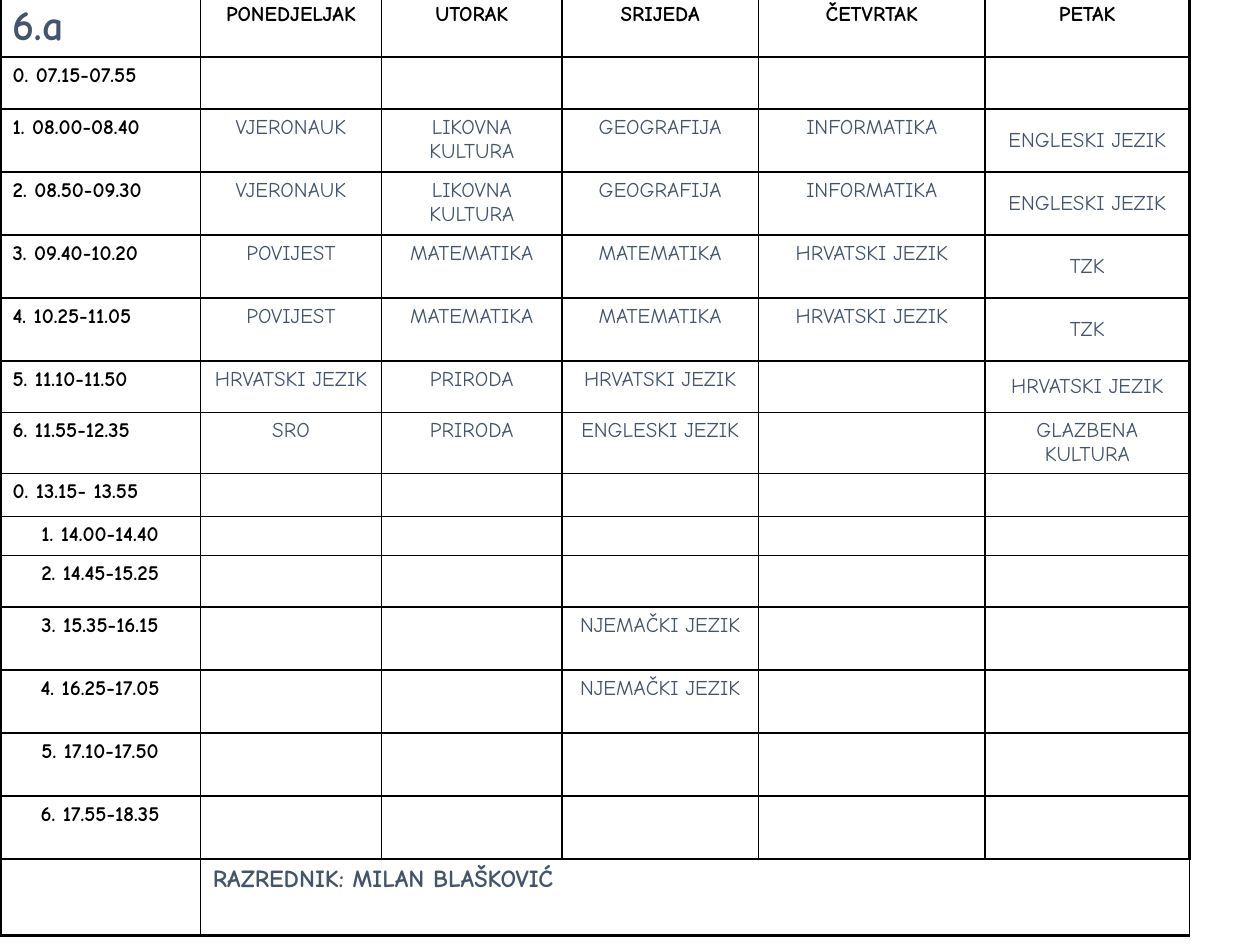
from dataclasses import dataclass

from lxml.etree import SubElement
from pptx import Presentation
from pptx.dml.color import RGBColor
from pptx.enum.text import MSO_ANCHOR as Anchor, PP_ALIGN as Align
from pptx.oxml.ns import qn
from pptx.util import Inches, Pt


@dataclass(frozen=True)
class Theme:
    font: str = "Comic Neue"
    ink: str = "000000"
    accent: str = "44546A"
    title: int = 24
    footer: int = 14
    body: int = 12
    thin: float = 1
    thick: float = 2.25


# Timetable content: (time, time alignment, five subjects)
DAYS = ["PONEDJELJAK", "UTORAK", "SRIJEDA", "ČETVRTAK", "PETAK"]
FREE = [""] * 5
ART = ["VJERONAUK", "LIKOVNA KULTURA", "GEOGRAFIJA", "INFORMATIKA", "ENGLESKI JEZIK"]
MATHS = ["POVIJEST", "MATEMATIKA", "MATEMATIKA", "HRVATSKI JEZIK", "TZK"]
GERMAN = ["", "", "NJEMAČKI JEZIK", "", ""]
LESSONS = [
    ("0. 07.15-07.55", Align.LEFT, FREE),
    ("1. 08.00-08.40", Align.LEFT, ART),
    ("2. 08.50-09.30", Align.LEFT, ART),
    ("3. 09.40-10.20", Align.LEFT, MATHS),
    ("4. 10.25-11.05", Align.LEFT, MATHS),
    ("5. 11.10-11.50", Align.LEFT,
     ["HRVATSKI JEZIK", "PRIRODA", "HRVATSKI JEZIK", "", "HRVATSKI JEZIK"]),
    ("6. 11.55-12.35", Align.LEFT,
     ["SRO", "PRIRODA", "ENGLESKI JEZIK", "", "GLAZBENA KULTURA"]),
    ("0. 13.15- 13.55", Align.LEFT, FREE),
    ("1. 14.00-14.40", Align.CENTER, FREE),
    ("2. 14.45-15.25", Align.CENTER, FREE),
    ("3. 15.35-16.15", Align.CENTER, GERMAN),
    ("4. 16.25-17.05", Align.CENTER, GERMAN),
    ("5. 17.10-17.50", Align.CENTER, FREE),
    ("6. 17.55-18.35", Align.CENTER, FREE),
]
COL_WIDTHS = [1.59, 1.44, 1.43, 1.56, 1.8, 1.62]
ROW_HEIGHTS = [0.39, 0.41, *[0.5] * 4, 0.41, 0.41, 0.34, 0.31, 0.41, *[0.5] * 4, 0.61]


class Timetable:
    def __init__(self, slide, theme):
        self.s, self.theme = slide, theme

    def grid(self, left, top, widths, heights):
        """Add a plain ruled table with a heavy outer frame."""
        frame = self.s.shapes.add_table(
            len(heights), len(widths), Inches(left), Inches(top),
            Inches(sum(widths)), Inches(sum(heights)))
        self.table = frame.table
        self.table.first_row = self.table.horz_banding = False
        for col, width in zip(self.table.columns, widths):
            col.width = Inches(width)
        for row, height in zip(self.table.rows, heights):
            row.height = Inches(height)
        last_row, last_col = len(heights) - 1, len(widths) - 1
        for i in range(last_row + 1):
            for j in range(last_col + 1):
                cell = self.table.cell(i, j)
                # Empty cells must not stretch the short rows
                cell.margin_top = cell.margin_bottom = 0
                self.borders(cell, {"L": j == 0, "R": j == last_col,
                                    "T": i == 0, "B": i == last_row})
                cell.fill.background()

    def borders(self, cell, outer):
        tc_pr = cell._tc.get_or_add_tcPr()
        for side, is_outer in outer.items():
            width = self.theme.thick if is_outer else self.theme.thin
            line = SubElement(tc_pr, qn(f"a:ln{side}"), w=str(Pt(width)))
            fill = SubElement(line, qn("a:solidFill"))
            SubElement(fill, qn("a:srgbClr"), val=self.theme.ink)

    def text(self, row, col, words, size, color, bold=True,
             align=Align.CENTER, anchor=Anchor.TOP):
        cell = self.table.cell(row, col)
        cell.margin_top = cell.margin_bottom = Inches(0.05)
        cell.vertical_anchor = anchor
        p = cell.text_frame.paragraphs[0]
        p.text, p.alignment = words, align
        p.font.name, p.font.size, p.font.bold = self.theme.font, Pt(size), bold
        p.font.color.rgb = RGBColor.from_string(color)

    def header(self, name, days):
        t = self.theme
        self.text(0, 0, name, t.title, t.accent, align=Align.LEFT)
        for col, day in enumerate(days, 1):
            self.text(0, col, day, t.body, t.ink)

    def lesson(self, row, time, align, subjects):
        t = self.theme
        self.text(row, 0, time, t.body, t.ink, align=align)
        for col, subject in enumerate(subjects, 1):
            if subject:
                anchor = Anchor.MIDDLE if col == len(subjects) else Anchor.TOP
                self.text(row, col, subject, t.body, t.accent, False, anchor=anchor)

    def footer(self, row, words):
        last = len(self.table.columns) - 1
        self.table.cell(row, 1).merge(self.table.cell(row, last))
        self.text(row, 1, words, self.theme.footer, self.theme.accent, align=Align.LEFT)


def main():
    prs = Presentation()
    prs.slide_width, prs.slide_height = Inches(10), Inches(7.5)
    s = prs.slides.add_slide(prs.slide_layouts[6])
    timetable = Timetable(s, Theme())

    # Ruled grid
    timetable.grid(0, -0.03, COL_WIDTHS, ROW_HEIGHTS)

    # Class name, days, lessons and class teacher
    timetable.header("6.a", DAYS)
    for row, lesson in enumerate(LESSONS, 1):
        timetable.lesson(row, *lesson)
    timetable.footer(len(LESSONS) + 1, "RAZREDNIK: MILAN BLAŠKOVIĆ")

    prs.save("out.pptx")


if __name__ == "__main__":
    main()
